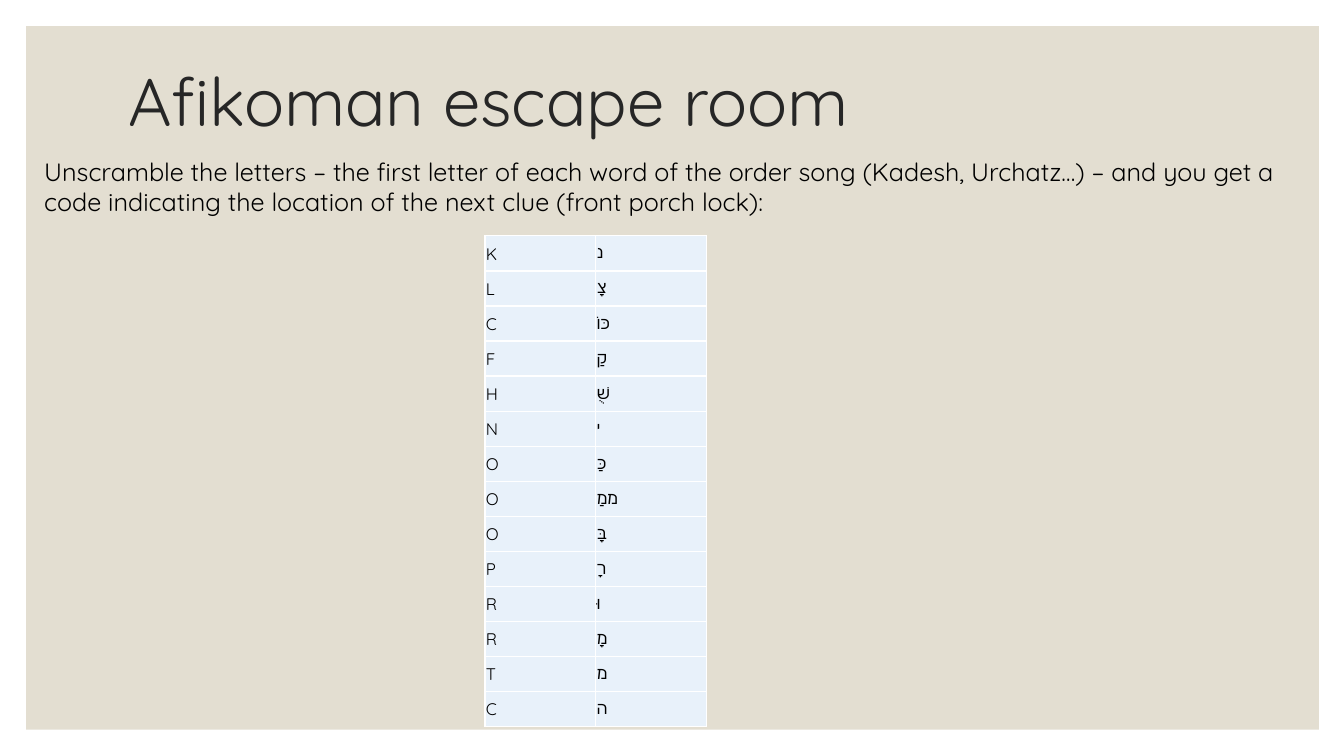
from lxml import etree
from pptx import Presentation
from pptx import util as u
from pptx.dml.color import RGBColor
from pptx.enum import shapes, text
from pptx.oxml.ns import qn

WIDTH, HEIGHT = 13.33, 7.5
FONT = "Quicksand"
COLORS = {"panel": "E3DED1", "title": "262626", "ink": "000000",
          "cell": "E8F1FA", "border": "FFFFFF"}
LETTERS = [("K", "נ"), ("L", "צָ"), ("C", "כּוֹ"), ("F", "קַ"), ("H", "שֻׁ"),
           ("N", "י"), ("O", "כַּ"), ("O", "ממַ"), ("O", "בָּ"), ("P", "רָ"),
           ("R", "וּ"), ("R", "מָ"), ("T", "מ"), ("C", "ה")]


def color(name):
    return RGBColor.from_string(COLORS[name])


def inches(box):
    return [u.Inches(length) for length in box]


def write(para, words, size, ink):
    para.alignment = text.PP_ALIGN.LEFT
    span = para.add_run()
    span.text = words
    span.font.name = FONT
    span.font.size = u.Pt(size)
    span.font.color.rgb = color(ink)


def add_panel(page, box):
    panel = page.shapes.add_shape(shapes.MSO_SHAPE.RECTANGLE, *inches(box))
    panel.shadow.inherit = False
    panel.fill.solid()
    panel.fill.fore_color.rgb = color("panel")
    panel.line.fill.background()
    # Send the panel behind the title
    page.shapes._spTree.insert(2, panel._element)


def add_title(page, box):
    title = page.shapes.title
    title.left, title.top, title.width, title.height = inches(box)
    frame = title.text_frame
    frame.vertical_anchor = text.MSO_ANCHOR.MIDDLE
    frame.paragraphs[0].line_spacing = 0.9
    write(frame.paragraphs[0], "Afikoman escape room", 48, "title")


def add_instructions(page, box):
    frame = page.shapes.add_textbox(*inches(box)).text_frame
    frame.word_wrap = True
    write(frame.paragraphs[0],
          "Unscramble the letters – the first letter of each word of the order song "
          "(Kadesh, Urchatz…) – and you get a code indicating the location of the "
          "next clue (front porch lock):", 18, "ink")


def format_cell(cell):
    cell.vertical_anchor = text.MSO_ANCHOR.MIDDLE
    cell.margin_left = cell.margin_right = cell.margin_top = u.Inches(0.01)
    cell.margin_bottom = 0
    cell.fill.solid()
    cell.fill.fore_color.rgb = color("cell")
    # Borders come before the fill in the cell properties
    properties = cell._tc.get_or_add_tcPr()
    for index, side in enumerate(("lnL", "lnR", "lnT", "lnB")):
        line = etree.Element(qn(f"a:{side}"), w=str(u.Pt(1)))
        fill = etree.SubElement(line, qn("a:solidFill"))
        etree.SubElement(fill, qn("a:srgbClr"), val=COLORS["border"])
        properties.insert(index, line)


def add_letter_table(page, box):
    left, top, width, height = inches(box)
    table = page.shapes.add_table(len(LETTERS), 2, left, top, width, height).table
    table.first_row = table.horz_banding = False
    for row, pair in enumerate(LETTERS):
        for column, letter in enumerate(pair):
            cell = table.cell(row, column)
            format_cell(cell)
            write(cell.text_frame.paragraphs[0], letter, 12, "ink")


def build_clue_slide(deck):
    page = deck.slides.add_slide(deck.slide_layouts[5])
    add_panel(page, (0.26, 0.26, 12.82, 6.98))
    add_title(page, (1.17, 0.29, 11.5, 1.5))
    add_instructions(page, (0.34, 1.5, 12.61, 1.62))
    add_letter_table(page, (4.81, 2.34, 2.2, 4.87))


def main():
    deck = Presentation()
    deck.slide_width, deck.slide_height = inches((WIDTH, HEIGHT))
    build_clue_slide(deck)
    deck.save("out.pptx")


if __name__ == "__main__":
    main()
